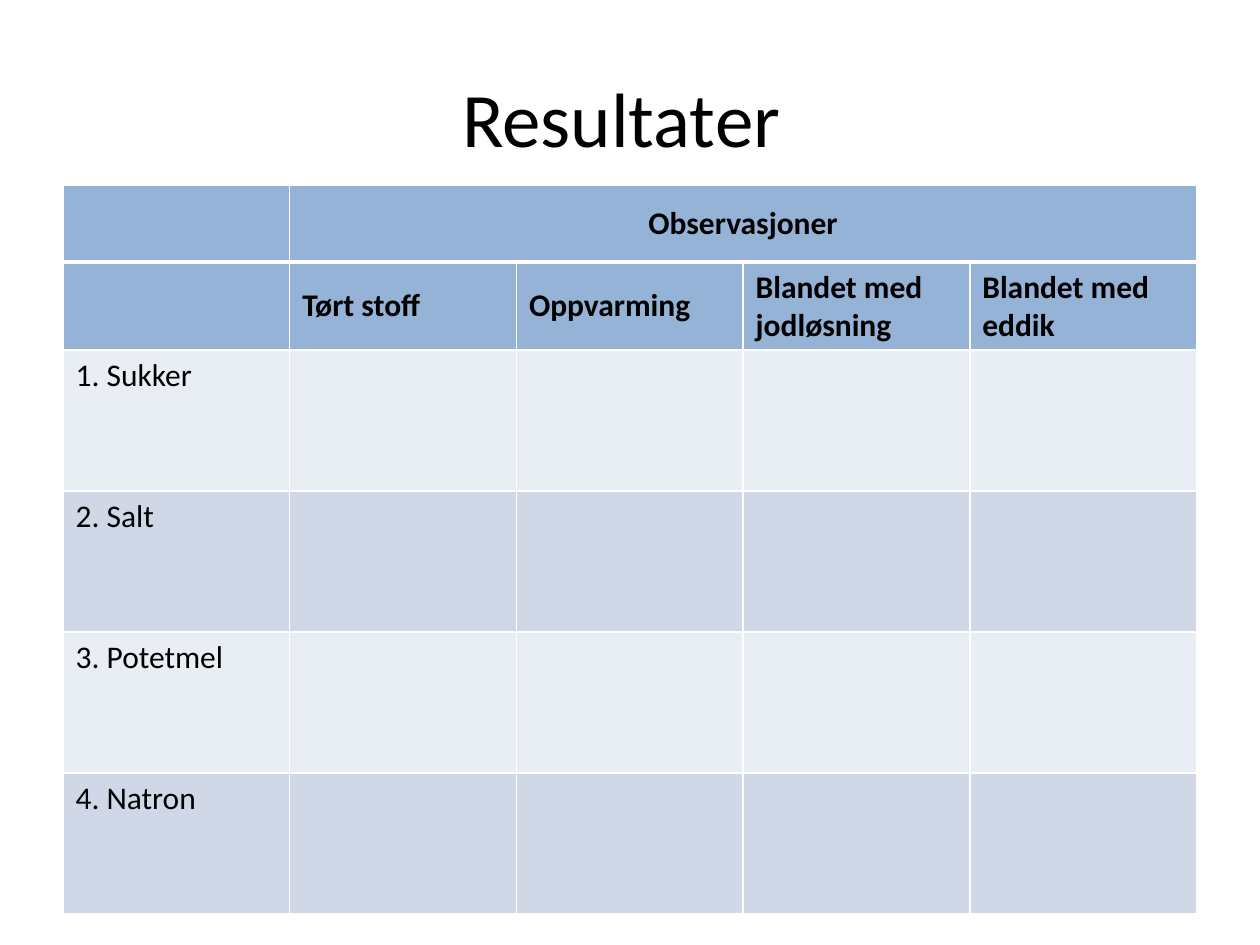
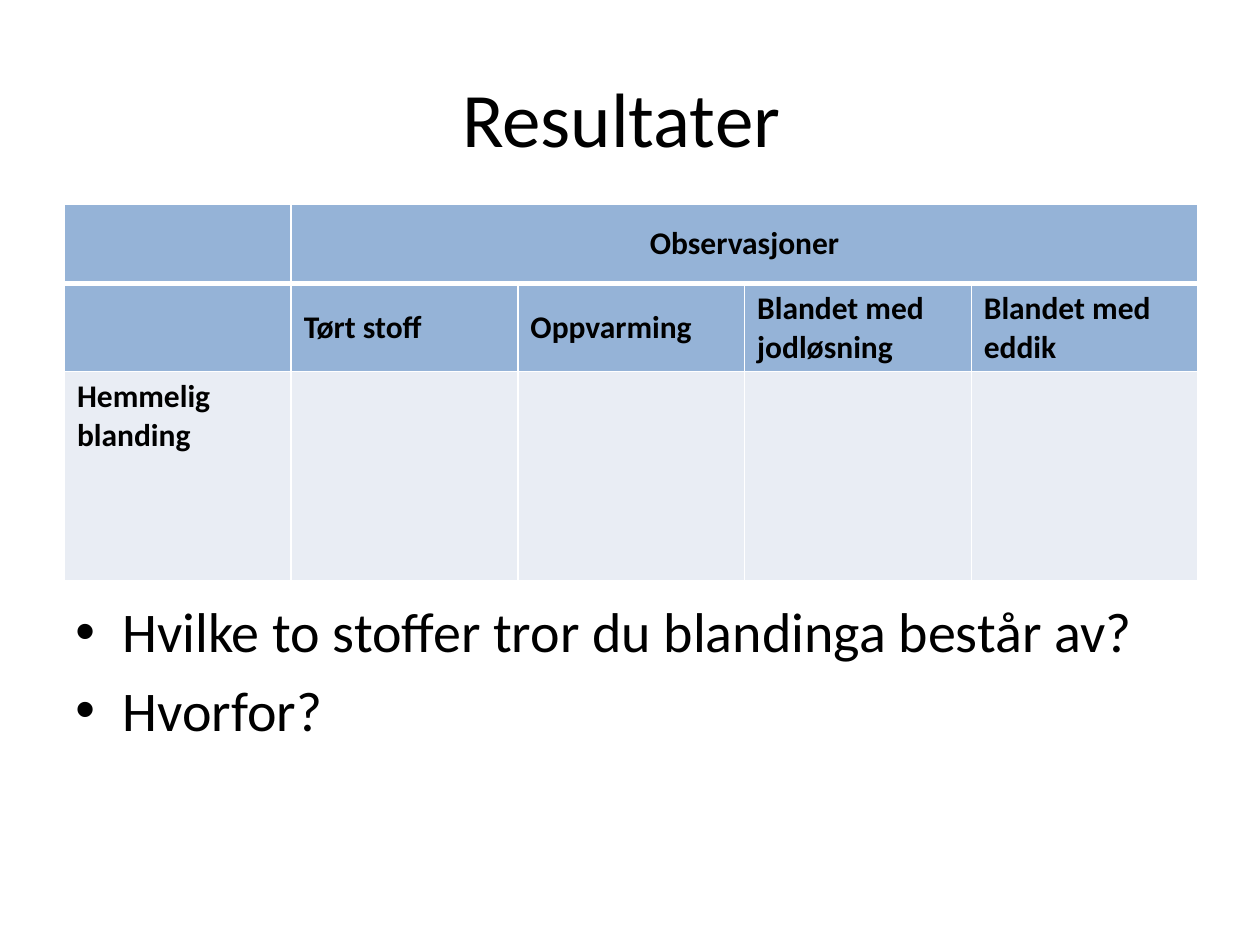
"""Build two result slides with observation tables for a kitchen chemistry experiment."""
from lxml import etree
from pptx import Presentation
from pptx import util as u
from pptx.dml import color as dml
from pptx.enum import text
from pptx.oxml import ns

COLOURS = {"text": "000000", "header": "95B3D7", "light": "E9EDF4", "dark": "D0D8E8", "border": "FFFFFF"}
FONT = "Calibri"
COLUMN_WIDTH = 4.57
HEADINGS = ["", "Tørt stoff", "Oppvarming", "Blandet med jodløsning", "Blandet med eddik"]
TITLE = {"size": u.Pt(44), "name": FONT, "bold": False}
QUESTION = {"size": u.Pt(32), "name": FONT, "bold": False}
CELL = {"size": u.Pt(18), "name": FONT, "bold": False}
CELL_BOLD = {**CELL, "bold": True}

RESULTS = [
    {"left": 1.27, "top": 3.73, "header_height": 1.55, "row_height": 2.84, "label_format": CELL,
     "labels": ["1. Sukker", "2. Salt", "3. Potetmel", "4. Natron"], "questions": []},
    {"left": 1.3, "top": 4.11, "header_height": 1.6, "row_height": 4.22, "label_format": CELL_BOLD,
     "labels": ["Hemmelig blanding"],
     "questions": ["Hvilke to stoffer tror du blandinga består av?", "Hvorfor?"]},
]


def style_font(font, values):
    for name, value in values.items():
        setattr(font, name, value)
    font.color.rgb = dml.RGBColor.from_string(COLOURS["text"])


def add_border(cell, side, points):
    line = etree.SubElement(cell._tc.get_or_add_tcPr(), ns.qn(f"a:{side}"), w=str(u.Pt(points)))
    fill = etree.SubElement(line, ns.qn("a:solidFill"))
    etree.SubElement(fill, ns.qn("a:srgbClr"), val=COLOURS["border"])


deck = Presentation()
deck.slide_width, deck.slide_height = u.Cm(25.4), u.Cm(19.05)

for result in RESULTS:
    page = deck.slides.add_slide(deck.slide_layouts[6])

    title = page.shapes.add_textbox(u.Cm(1.27), u.Cm(0.76), u.Cm(22.86), u.Cm(3.18)).text_frame
    title.word_wrap = True
    title.vertical_anchor = text.MSO_ANCHOR.MIDDLE
    para = title.paragraphs[0]
    para.alignment = text.PP_ALIGN.CENTER
    span = para.add_run()
    span.text = "Resultater "
    style_font(span.font, TITLE)

    if result["questions"]:
        box = page.shapes.add_textbox(u.Cm(1.27), u.Cm(11.91), u.Cm(22.86), u.Cm(5.11)).text_frame
        box.word_wrap = True
        for index, question in enumerate(result["questions"]):
            para = box.paragraphs[0] if index == 0 else box.add_paragraph()
            if index:
                para.space_before = u.Pt(6.4)
            properties = para._p.get_or_add_pPr()
            properties.set("marL", str(u.Cm(0.95)))
            properties.set("indent", str(-u.Cm(0.95)))
            etree.SubElement(properties, ns.qn("a:buFont"), typeface="Arial")
            etree.SubElement(properties, ns.qn("a:buChar"), char="•")
            span = para.add_run()
            span.text = question
            style_font(span.font, QUESTION)

    rows = [["", "Observasjoner", "", "", ""], HEADINGS]
    rows += [[label, "", "", "", ""] for label in result["labels"]]
    heights = [result["header_height"], 1.78] + [result["row_height"]] * len(result["labels"])
    table = page.shapes.add_table(
        len(rows), len(HEADINGS), u.Cm(result["left"]), u.Cm(result["top"]),
        u.Cm(COLUMN_WIDTH * len(HEADINGS)), u.Cm(sum(heights))).table
    for column in table.columns:
        column.width = u.Cm(COLUMN_WIDTH)
    table.cell(0, 1).merge(table.cell(0, 4))

    for row_index, (words, height) in enumerate(zip(rows, heights)):
        table.rows[row_index].height = u.Cm(height)
        is_header = row_index < 2
        shade = "header" if is_header else ("light", "dark")[row_index % 2]
        for column_index, word in enumerate(words):
            cell = table.cell(row_index, column_index)
            borders = {"lnL": 1, "lnR": 1, "lnT": 3 if row_index == 1 else 1, "lnB": 3 if row_index == 0 else 1}
            for side, points in borders.items():
                add_border(cell, side, points)
            cell.fill.solid()
            cell.fill.fore_color.rgb = dml.RGBColor.from_string(COLOURS[shade])
            cell.vertical_anchor = text.MSO_ANCHOR.MIDDLE if is_header else text.MSO_ANCHOR.TOP
            if word:
                para = cell.text_frame.paragraphs[0]
                para.alignment = text.PP_ALIGN.CENTER if row_index == 0 else text.PP_ALIGN.LEFT
                span = para.add_run()
                span.text = word
                style_font(span.font, CELL_BOLD if is_header else result["label_format"])

deck.save("out.pptx")
